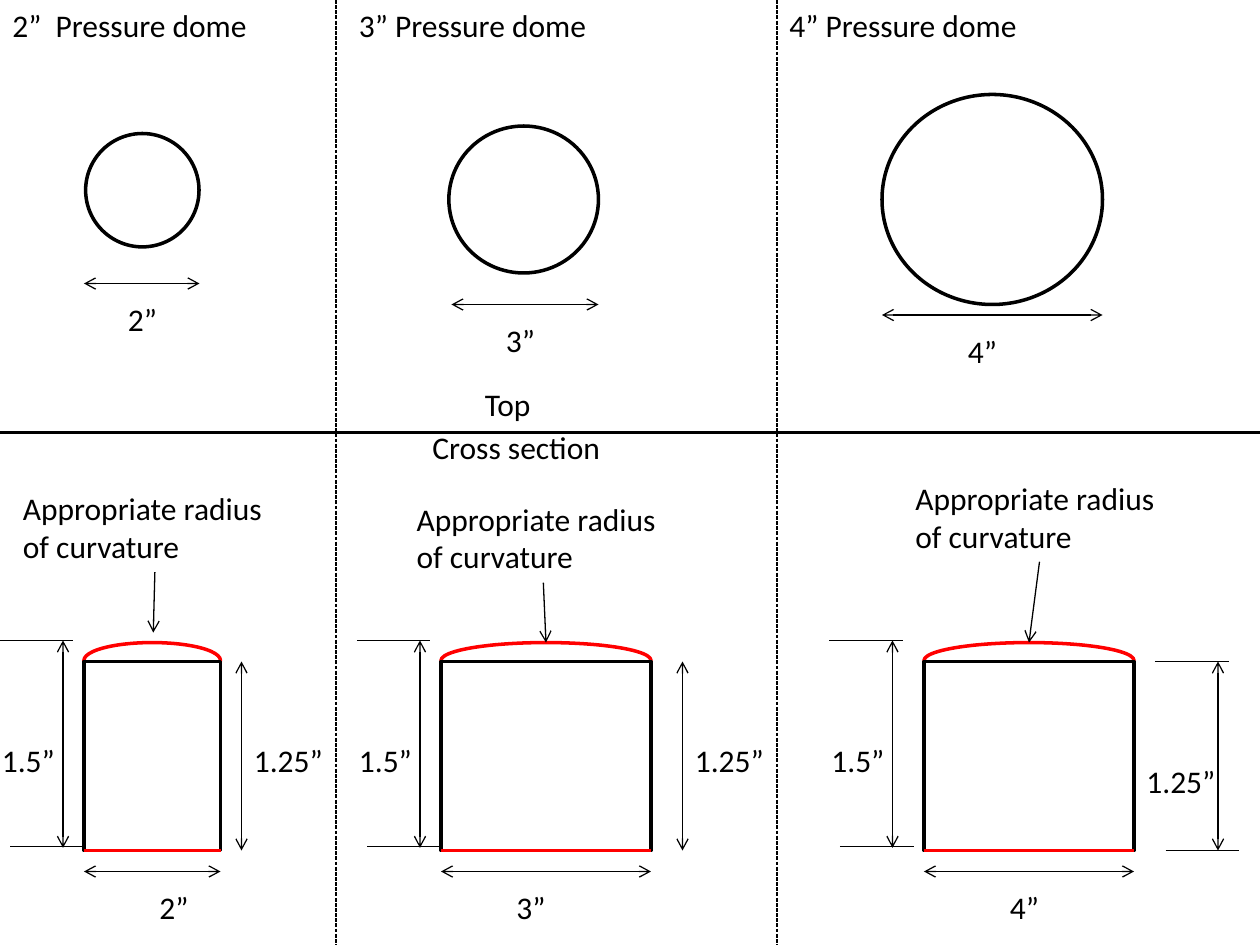
from dataclasses import dataclass
from lxml import etree
from pptx import Presentation
from pptx import util as u
from pptx.dml.color import RGBColor
from pptx.enum import dml, shapes, text
from pptx.oxml import ns

COLORS = {"ink": "000000", "paper": "FFFFFF", "curve": "FF0000"}
COLUMNS, ROWS = 120, 90


def write(frame, content, font="Calibri", size=18, color="ink"):
    frame.word_wrap = True
    frame.auto_size = text.MSO_AUTO_SIZE.SHAPE_TO_FIT_TEXT
    run = frame.paragraphs[0].add_run()
    run.text = content
    run.font.name = font
    run.font.size = u.Pt(size)
    run.font.color.rgb = RGBColor.from_string(COLORS[color])


@dataclass
class Sketch:
    presentation: object
    slide: object
    thin: float = 0.75
    thick: float = 2

    def place(self, column, row):
        return (round(self.presentation.slide_width * column / COLUMNS),
                round(self.presentation.slide_height * row / ROWS))

    def stroke(self, line, color, width):
        line.color.rgb = RGBColor.from_string(COLORS[color])
        line.width = u.Pt(width)

    def label(self, content, column, row, width, height=5):
        box = self.slide.shapes.add_textbox(*self.place(column, row), *self.place(width, height))
        write(box.text_frame, content)

    def outline(self, kind, column, row, width, height, color="ink", fill=None):
        shape = self.slide.shapes.add_shape(
            kind, *self.place(column, row), *self.place(width, height))
        shape.shadow.inherit = False
        if fill:
            shape.fill.solid()
            shape.fill.fore_color.rgb = RGBColor.from_string(COLORS[fill])
        else:
            shape.fill.background()
        self.stroke(shape.line, color, self.thick)

    def line(self, start, end, color="ink", width=None, dash=None, arrows=()):
        connector = self.slide.shapes.add_connector(
            shapes.MSO_CONNECTOR.STRAIGHT, *self.place(*start), *self.place(*end))
        self.stroke(connector.line, color, width or self.thin)
        if dash:
            connector.line.dash_style = dash
        properties = connector._element.spPr
        outline = properties.find(ns.qn("a:ln"))
        for arrow in arrows:
            etree.SubElement(outline, ns.qn(f"a:{arrow}"), type="arrow")
        etree.SubElement(properties, ns.qn("a:effectLst"))

    def dimension(self, start, end):
        self.line(start, end, arrows=("headEnd", "tailEnd"))

    def pointer(self, start, end):
        self.line(start, end, arrows=("tailEnd",))

    def ticks(self, column, top, bottom):
        self.line((column - 6, top), (column + 1, top))
        self.line((column - 5, bottom), (column + 2, bottom))

    def top_view(self, size, circle, span, row, label_column):
        self.outline(shapes.MSO_SHAPE.OVAL, *circle)
        self.dimension((span[0], row), (span[1], row))
        self.label(size, label_column, row + 1, 8)

    def cross_section(self, size, left, width, label_column, total, total_width):
        right = left + width
        self.outline(shapes.MSO_SHAPE.OVAL, left, 61.2, width, 3.4, "curve")
        self.outline(shapes.MSO_SHAPE.RECTANGLE, left, 63, width, 18, fill="paper")
        self.line((left, 81), (right, 81), "curve", self.thick)
        self.dimension((left, 83), (right, 83))
        self.label(size, label_column, 84, 8)
        self.dimension((total, 61), (total, 80.75))
        self.ticks(total, 61, 80.6)
        self.label("1.5”", total - 7, 70, total_width)

    def wall_height(self, column, label_column, label_row, label_width):
        self.dimension((column, 63), (column, 81))
        self.label("1.25”", label_column, label_row, label_width)

    def curvature(self, column, row, width, start, end):
        self.label("Appropriate radius of curvature", column, row, width, 8.5)
        self.pointer(start, end)


DOMES = [
    dict(title=("2”  Pressure dome", 0),
         top=("2”", (8.16, 12.72, 10.8, 10.8), (8, 19), 27, 11),
         section=("2”", 8, 13, 14, 6, 11),
         wall=(23, 23, 70, 11),
         note=(1, 46, 27.5, (14.75, 54.5), (14.6, 60.25))),
    dict(title=("3” Pressure dome", 33),
         top=("3”", (42.75, 12, 14.25, 14), (43, 57), 29, 47),
         section=("3”", 42, 20, 48, 40, 11),
         wall=(65, 65, 70, 11),
         note=(38.5, 47, 26.5, (51.75, 55.5), (52, 61.2))),
    dict(title=("4” Pressure dome", 74),
         top=("4”", (84, 9, 21, 20), (84, 105), 30, 91),
         section=("4”", 88, 20, 95, 85, 8),
         wall=(116, 108, 72, 10),
         note=(86, 45, 26, (99, 53.5), (98, 61.2))),
]


def main():
    presentation = Presentation()
    presentation.slide_width = u.Inches(10)
    presentation.slide_height = u.Inches(7.5)
    slide = presentation.slides.add_slide(presentation.slide_layouts[6])
    sketch = Sketch(presentation, slide)

    sketch.line((0, 41.2), (COLUMNS, 41.2), width=1.5)
    for column in (32, 74):
        sketch.line((column, 0), (column, ROWS), dash=dml.MSO_LINE.SQUARE_DOT)
    sketch.label("Top", 45, 36.1, 17)
    sketch.label("Cross section", 40, 40.2, 20)

    for dome in DOMES:
        title, column = dome["title"]
        sketch.label(title, column, 0, 29)
        sketch.top_view(*dome["top"])
        sketch.cross_section(*dome["section"])
        sketch.wall_height(*dome["wall"])
        sketch.curvature(*dome["note"])
    sketch.ticks(116, 63, 81)

    presentation.save("out.pptx")


if __name__ == "__main__":
    main()
